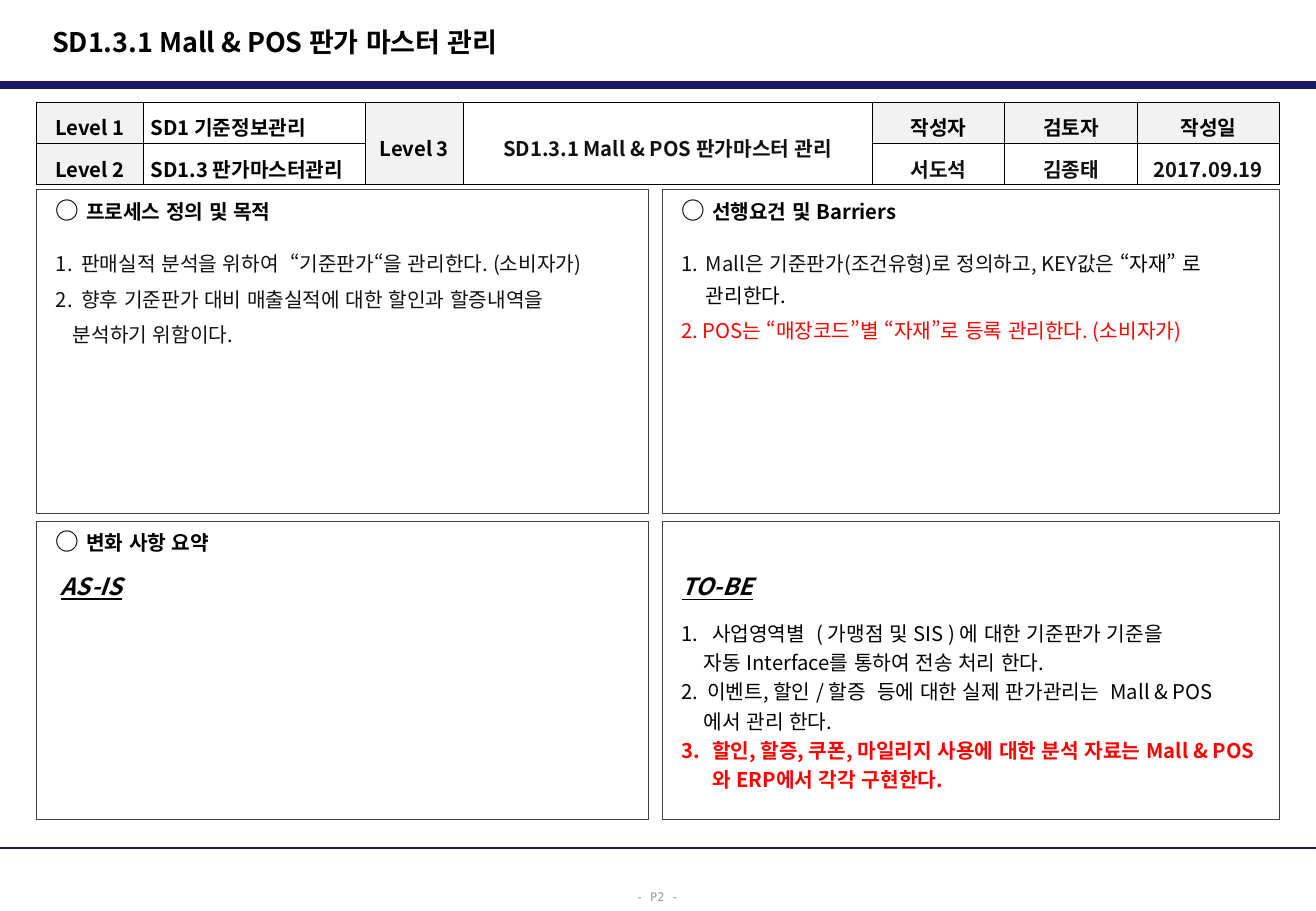
from lxml import etree
from pptx import Presentation
from pptx.dml.color import RGBColor
from pptx.enum.lang import MSO_LANGUAGE_ID
from pptx.enum.shapes import MSO_CONNECTOR, MSO_SHAPE
from pptx.enum.text import MSO_ANCHOR, PP_ALIGN
from pptx.oxml.ns import qn
from pptx.util import Inches, Pt

FONT = "Noto Sans CJK KR"
PAGE_FONT = "DejaVu Sans Mono"
COLORS = {
    "black": "000000", "ink": "111111", "red": "FF0000", "gray": "969696",
    "navy": "191966", "frame": "404040", "label": "F2F2F2", "white": "FFFFFF",
}

LEFT, RIGHT = 0.3, 5.45
TOP, BOTTOM = 1.56, 4.29
LEFT_WIDTH, RIGHT_WIDTH = 5.04, 5.08
TOP_HEIGHT, BOTTOM_HEIGHT = 2.67, 2.46

COLUMN_WIDTHS = [0.88, 1.83, 0.8, 3.37, 1.09, 1.09, 1.17]
ROW_HEIGHT = 0.34
HEADER_ROWS = [
    ["Level 1", "SD1 기준정보관리", "Level 3", "SD1.3.1 Mall & POS 판가마스터 관리",
     "작성자", "검토자", "작성일"],
    ["Level 2", "SD1.3 판가마스터관리", "", "", "서도석", "김종태", "2017.09.19"],
]
LABEL_CELLS = {(0, 0), (1, 0), (0, 2), (0, 4), (0, 5), (0, 6)}
INK_CELLS = {(0, 3), (1, 4), (1, 5), (1, 6)}


def rgb(name):
    return RGBColor.from_string(COLORS[name])


def set_font(para, size, color, bold=False, name=FONT):
    """Set the paragraph font, for Latin and East Asian letters alike."""
    font = para.font
    font.size, font.bold, font.name = Pt(size), bold, name
    font.language_id = MSO_LANGUAGE_ID.KOREAN
    font.color.rgb = rgb(color)
    default = para._p.pPr.find(qn("a:defRPr"))
    east_asian = etree.Element(qn("a:ea"), typeface=name)
    default.find(qn("a:latin")).addnext(east_asian)


def add_span(para, text):
    span = para.add_run()
    span.text = text
    span.font.language_id = MSO_LANGUAGE_ID.KOREAN
    return span


def set_indent(para, margin, hanging=0):
    properties = para._p.get_or_add_pPr()
    properties.set("marL", str(Inches(margin)))
    properties.set("indent", str(-Inches(hanging)))


def set_number(para, number, hanging, color):
    set_indent(para, hanging, hanging)
    properties = para._p.get_or_add_pPr()
    bullet_color = etree.SubElement(properties, qn("a:buClr"))
    etree.SubElement(bullet_color, qn("a:srgbClr"), val=COLORS[color])
    etree.SubElement(properties, qn("a:buAutoNum"), type="arabicPeriod",
                     startAt=str(number))


def next_para(box):
    """Return the empty first paragraph, or a new one after the text."""
    frame = box.text_frame
    first = frame.paragraphs[0]
    para = frame.add_paragraph() if first.runs else first
    para.alignment = PP_ALIGN.LEFT
    return para


def add_heading(box, text):
    para = next_para(box)
    set_font(para, 12, "black", bold=True)
    add_span(para, "○ ").font.size = Pt(14)
    add_span(para, text)


def add_state(box, text, before=0, margin=0):
    """Add the underlined AS-IS or TO-BE caption."""
    para = next_para(box)
    set_indent(para, margin)
    if before:
        para.space_before = Pt(before)
    set_font(para, 14, "black", bold=True)
    para.font.italic = para.font.underline = True
    add_span(para, text)


def add_item(box, text, number=None, margin=0.2, before=0, spacing=1.2,
             color="black", bold=False):
    """Add a numbered item, or a continuation line if there is no number."""
    para = next_para(box)
    para.line_spacing = spacing
    para.space_before = Pt(before)
    if number:
        set_number(para, number, margin, color)
    else:
        set_indent(para, margin)
    set_font(para, 12, color, bold)
    add_span(para, text)
    return para


def add_panel(page, left, top, width, height, inset_top=0.05):
    box = page.shapes.add_shape(MSO_SHAPE.RECTANGLE, Inches(left), Inches(top),
                                Inches(width), Inches(height))
    box.shadow.inherit = False
    box.fill.background()
    box.line.color.rgb = rgb("frame")
    box.line.width = Pt(0.5)
    frame = box.text_frame
    frame.word_wrap = True
    frame.vertical_anchor = MSO_ANCHOR.TOP
    frame.margin_left, frame.margin_right = Inches(0.16), Inches(0.1)
    frame.margin_top, frame.margin_bottom = Inches(inset_top), Inches(0.05)
    return box


def add_rule(page, top, width):
    rule = page.shapes.add_connector(MSO_CONNECTOR.STRAIGHT, 0, Inches(top),
                                     Inches(10.83), Inches(top))
    rule.line.color.rgb = rgb("navy")
    rule.line.width = Pt(width)
    etree.SubElement(rule._element.spPr, qn("a:effectLst"))


def add_label(page, left, top, width, height, text, size, color, name=FONT,
              bold=False, align=PP_ALIGN.LEFT):
    box = page.shapes.add_textbox(Inches(left), Inches(top), Inches(width), Inches(height))
    box.text_frame.word_wrap = True
    box.text_frame.vertical_anchor = MSO_ANCHOR.MIDDLE
    para = box.text_frame.paragraphs[0]
    para.alignment = align
    set_font(para, size, color, bold, name)
    add_span(para, text)


def set_borders(cell):
    properties = cell._tc.get_or_add_tcPr()
    for index, side in enumerate(("a:lnL", "a:lnR", "a:lnT", "a:lnB")):
        border = etree.Element(qn(side), w=str(Pt(0.5)))
        fill = etree.SubElement(border, qn("a:solidFill"))
        etree.SubElement(fill, qn("a:srgbClr"), val=COLORS["black"])
        properties.insert(index, border)


def add_header_table(page):
    table = page.shapes.add_table(
        len(HEADER_ROWS), len(COLUMN_WIDTHS), Inches(LEFT), Inches(0.84),
        Inches(sum(COLUMN_WIDTHS)), Inches(ROW_HEIGHT * len(HEADER_ROWS))).table
    table.first_row = table.horz_banding = False
    for column, width in zip(table.columns, COLUMN_WIDTHS):
        column.width = Inches(width)
    for row_index, texts in enumerate(HEADER_ROWS):
        table.rows[row_index].height = Inches(ROW_HEIGHT)
        for column_index, text in enumerate(texts):
            place = (row_index, column_index)
            cell = table.cell(*place)
            cell.fill.solid()
            cell.fill.fore_color.rgb = rgb("label" if place in LABEL_CELLS else "white")
            set_borders(cell)
            cell.vertical_anchor = MSO_ANCHOR.MIDDLE
            cell.margin_left = cell.margin_right = Inches(0.06)
            cell.margin_top = cell.margin_bottom = Inches(0.01)
            para = cell.text_frame.paragraphs[0]
            para.alignment = PP_ALIGN.LEFT if column_index == 1 else PP_ALIGN.CENTER
            para.line_spacing = 1.3
            set_font(para, 12, "ink" if place in INK_CELLS else "black", bold=True)
            if text:
                add_span(para, text)
    for column_index in (2, 3):
        table.cell(0, column_index).merge(table.cell(1, column_index))


def main():
    deck = Presentation()
    deck.slide_width, deck.slide_height = Inches(10.83), Inches(7.5)
    page = deck.slides.add_slide(deck.slide_layouts[6])

    add_rule(page, 0.7, 4.5)
    add_rule(page, 6.98, 1.5)
    add_label(page, 5.01, 7.26, 0.8, 0.25, "- P2 -", 7, "gray", PAGE_FONT,
              align=PP_ALIGN.CENTER)
    add_label(page, 0.33, 0.15, 7.11, 0.38, "SD1.3.1 Mall & POS 판가 마스터 관리",
              16, "black", bold=True)
    add_header_table(page)

    purpose = add_panel(page, LEFT, TOP, LEFT_WIDTH, TOP_HEIGHT)
    add_heading(purpose, "프로세스 정의 및 목적")
    add_item(purpose, "판매실적 분석을 위하여  “기준판가“을 관리한다. (소비자가)",
             1, 0.21, 12, 1.3, "ink")
    add_item(purpose, "향후 기준판가 대비 매출실적에 대한 할인과 할증내역을",
             2, 0.21, 2.4, 1.3, "ink")
    add_item(purpose, "분석하기 위함이다.", None, 0.14, 2.4, 1.3, "ink")

    barriers = add_panel(page, RIGHT, TOP, RIGHT_WIDTH, TOP_HEIGHT)
    add_heading(barriers, "선행요건 및 Barriers")
    para = add_item(barriers, "Mall은 기준판가(조건유형)로 정의하고, KEY값은 ",
                    1, 0.2, 12, 1.3, "ink")
    add_span(para, "“자재” 로 관리한다.").font.color.rgb = rgb("black")
    add_item(barriers, "POS는 “매장코드”별 “자재”로 등록 관리한다. (소비자가)",
             2, 0.17, 2.4, 1.3, "red")

    as_is = add_panel(page, LEFT, BOTTOM, LEFT_WIDTH, BOTTOM_HEIGHT)
    add_heading(as_is, "변화 사항 요약")
    add_state(as_is, "AS-IS", before=9.6, margin=0.04)

    to_be = add_panel(page, RIGHT, BOTTOM, RIGHT_WIDTH, BOTTOM_HEIGHT, inset_top=0.42)
    add_state(to_be, "TO-BE")
    add_item(to_be, "사업영역별  ( 가맹점 및 SIS ) 에 대한 기준판가 기준을", 1, 0.25, 9.6)
    add_item(to_be, "자동 Interface를 통하여 전송 처리 한다.", None, 0.18)
    add_item(to_be, "이벤트, 할인 / 할증  등에 대한 실제 판가관리는  Mall & POS", 2, 0.21)
    add_item(to_be, "에서 관리 한다.", None, 0.18)
    add_item(to_be, "할인, 할증, 쿠폰, 마일리지 사용에 대한 분석 자료는 Mall & POS와 "
             "ERP에서 각각 구현한다.", 3, 0.25, color="red", bold=True)

    deck.save("out.pptx")


if __name__ == "__main__":
    main()
